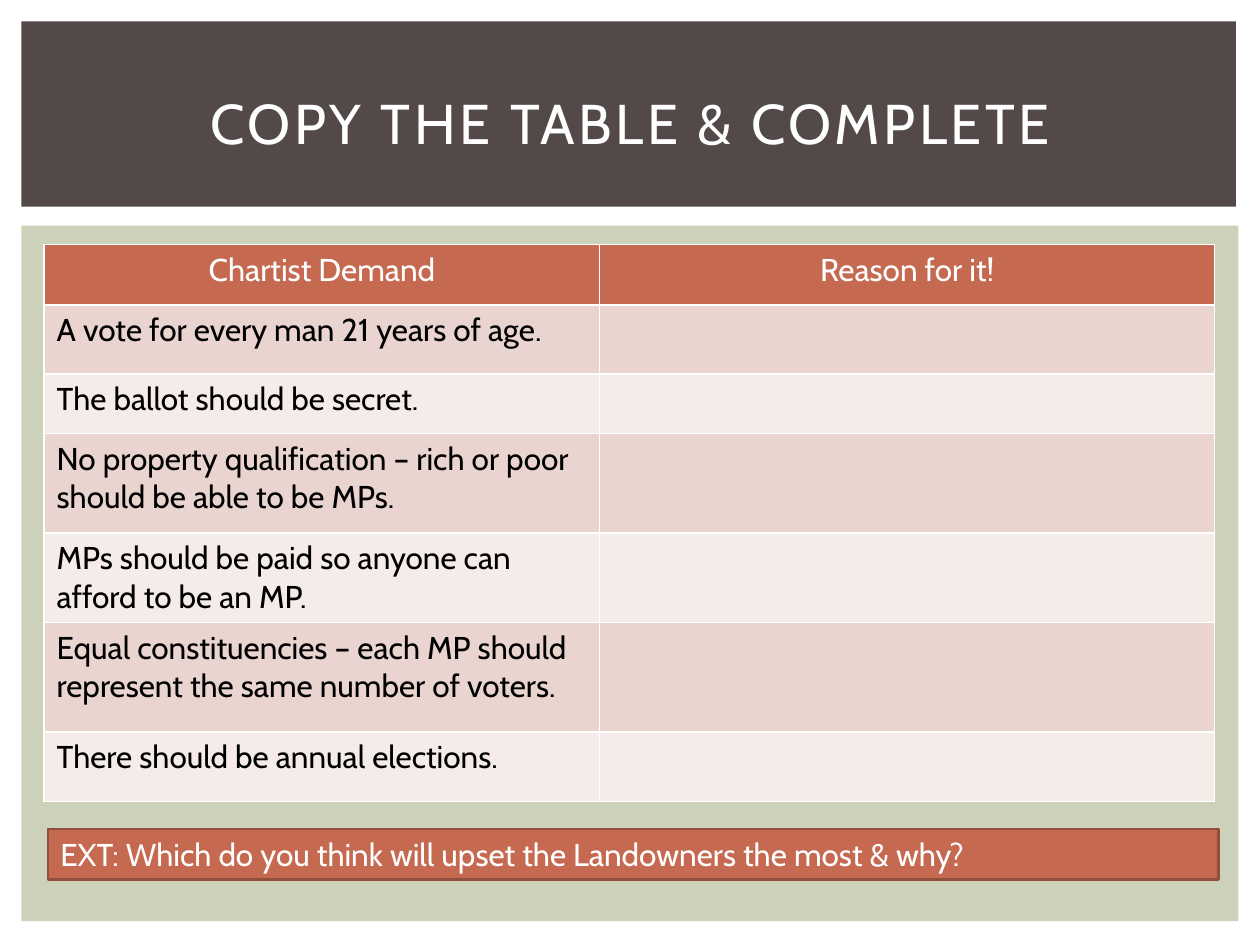
from pptx import Presentation
from pptx.dml.color import RGBColor
from pptx.enum.shapes import MSO_SHAPE
from pptx.enum.text import MSO_ANCHOR, PP_ALIGN
from pptx.util import Inches, Pt

RECTANGLE = MSO_SHAPE.RECTANGLE
MIDDLE = MSO_ANCHOR.MIDDLE
LEFT, CENTER = PP_ALIGN.LEFT, PP_ALIGN.CENTER

WHITE = RGBColor(0xFF, 0xFF, 0xFF)
BLACK = RGBColor(0x00, 0x00, 0x00)
SAGE = RGBColor(0xCC, 0xD1, 0xB9)
BROWN = RGBColor(0x53, 0x49, 0x49)
RUST = RGBColor(0xC6, 0x69, 0x51)
DARK_RUST = RGBColor(0x92, 0x4E, 0x3C)
ROW_FILLS = [RGBColor(0xEA, 0xD4, 0xD0), RGBColor(0xF5, 0xEB, 0xE9)]
FONT = "Cabin"

TITLE = "COPY THE TABLE & COMPLETE"
HEADINGS = ["Chartist Demand", "Reason for it!"]
DEMANDS = [  # demand, row height
    ("A vote for every man 21 years of age.", 0.55),
    ("The ballot should be secret.", 0.47),
    ("No property qualification – rich or poor should be able to be MPs.", 0.79),
    ("MPs should be paid so anyone can afford to be an MP.", 0.71),
    ("Equal constituencies – each MP should represent the same number of voters.", 0.87),
    ("There should be annual elections.", 0.55),
]
EXTENSION = "EXT: Which do you think will upset the Landowners the most & why?"

HEADER_HEIGHT = 0.48
COLUMN_WIDTHS = [4.41, 4.88]


def write(frame, text, size=18, color=WHITE, align=LEFT, spacing=0):
    para = frame.paragraphs[0]
    para.alignment = align
    span = para.add_run()
    span.text = text
    span.font.name = FONT
    span.font.size = Pt(size)
    span.font.bold = False
    span.font.color.rgb = color
    if spacing:
        span._r.get_or_add_rPr().set("spc", str(spacing * 100))


def add_box(page, left, top, width, height, fill, line=None):
    box = page.shapes.add_shape(
        RECTANGLE, Inches(left), Inches(top), Inches(width), Inches(height))
    box.shadow.inherit = False
    box.fill.solid()
    box.fill.fore_color.rgb = fill
    if line is None:
        box.line.fill.background()
    else:
        box.line.color.rgb = line
        box.line.width = Pt(1.5)
    return box


def add_title(page):
    title = page.shapes.title
    title.left, title.top = Inches(0.42), Inches(0.39)
    title.width, title.height = Inches(9.17), Inches(1.15)
    title.text_frame.vertical_anchor = MIDDLE
    write(title.text_frame, TITLE, size=32, align=CENTER, spacing=2)
    # Bring the title in front of the bands
    title.element.getparent().append(title.element)


def add_demand_table(page):
    heights = [HEADER_HEIGHT] + [height for _, height in DEMANDS]
    table = page.shapes.add_table(
        len(heights), len(COLUMN_WIDTHS), Inches(0.35), Inches(1.94),
        Inches(sum(COLUMN_WIDTHS)), Inches(sum(heights))).table
    for column, width in zip(table.columns, COLUMN_WIDTHS):
        column.width = Inches(width)
    for row, height in zip(table.rows, heights):
        row.height = Inches(height)

    for index, row in enumerate(table.rows):
        for cell in row.cells:
            cell.fill.solid()
            cell.fill.fore_color.rgb = ROW_FILLS[(index - 1) % 2] if index else RUST

    for column, heading in enumerate(HEADINGS):
        write(table.cell(0, column).text_frame, heading, align=CENTER)
    for index, (demand, _) in enumerate(DEMANDS, start=1):
        write(table.cell(index, 0).text_frame, demand, color=BLACK)


def main():
    deck = Presentation()
    deck.slide_width, deck.slide_height = Inches(10), Inches(7.5)
    page = deck.slides.add_slide(deck.slide_layouts.get_by_name("Title Only"))

    add_box(page, 0.17, 1.79, 9.66, 5.52, SAGE)
    add_box(page, 0.17, 0.17, 9.64, 1.47, BROWN)
    add_title(page)
    add_demand_table(page)

    extension = add_box(page, 0.38, 6.58, 9.29, 0.4, RUST, line=DARK_RUST)
    extension.text_frame.word_wrap = True
    extension.text_frame.vertical_anchor = MIDDLE
    write(extension.text_frame, EXTENSION)

    deck.save("out.pptx")


if __name__ == "__main__":
    main()
